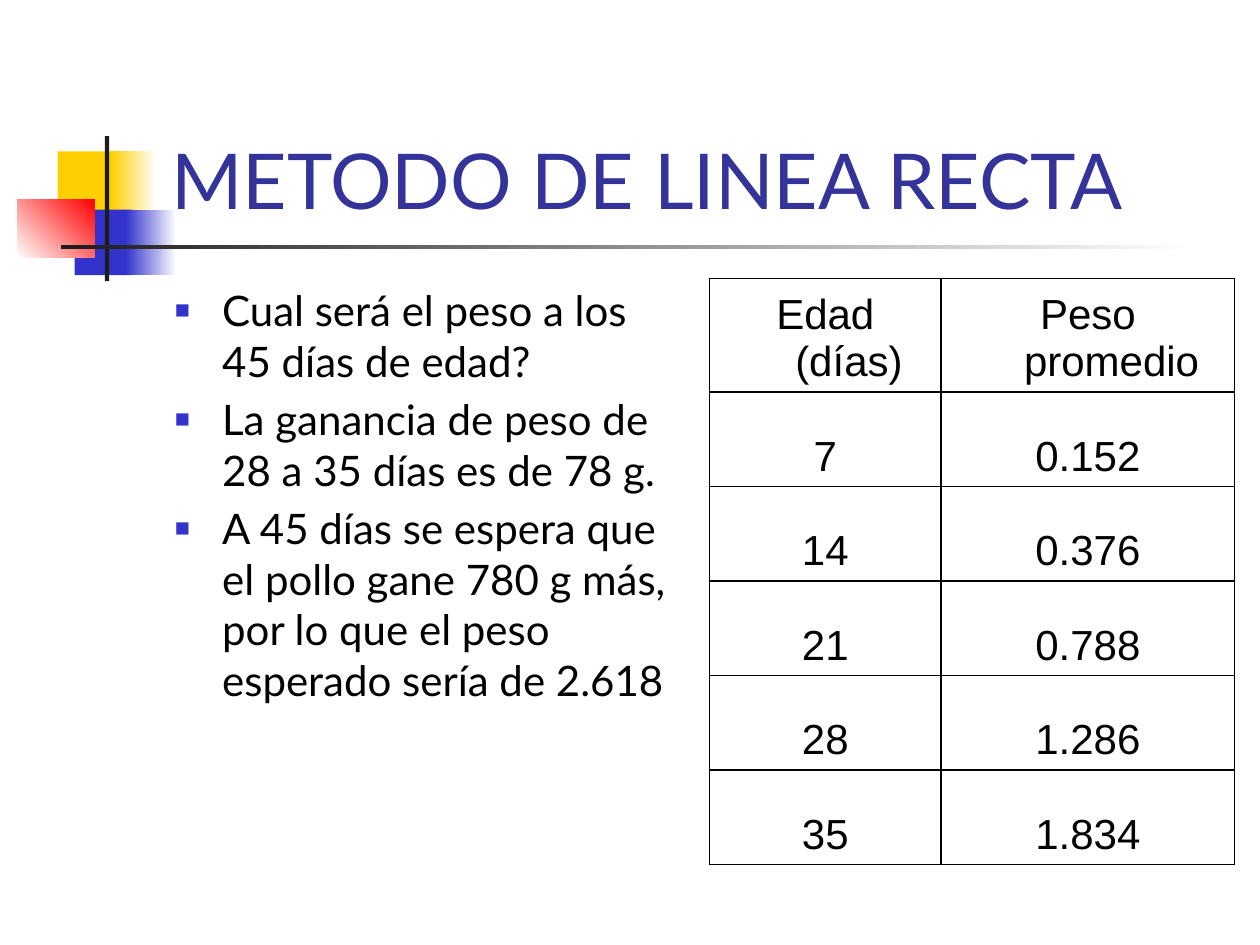
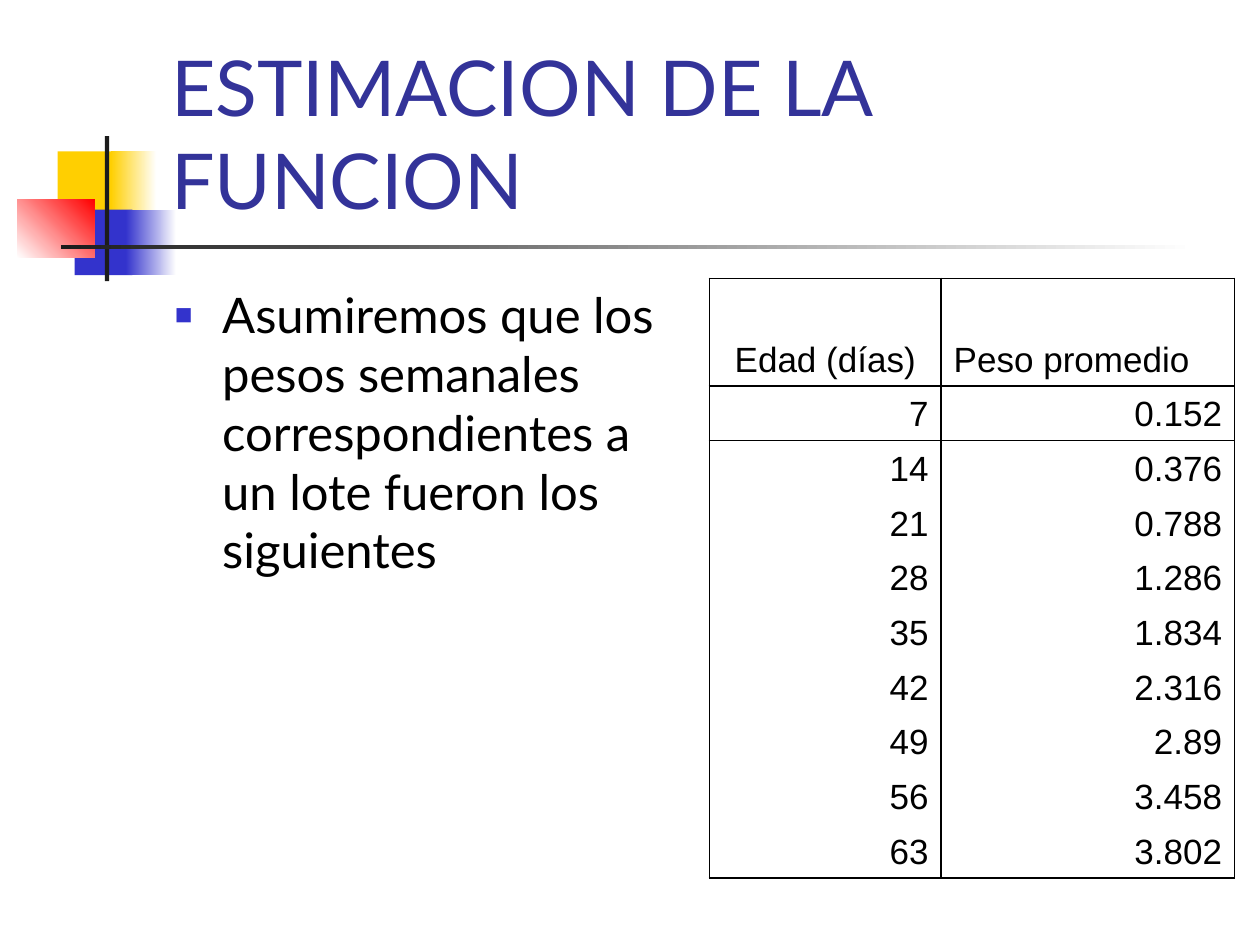
import pptx
import pptx.util
import pptx.dml.color
import pptx.enum.shapes
import pptx.enum.text
import pptx.oxml.ns
from dataclasses import dataclass
from lxml import etree

Pt = pptx.util.Pt
Align = pptx.enum.text.PP_ALIGN
Anchor = pptx.enum.text.MSO_ANCHOR
qn = pptx.oxml.ns.qn


@dataclass(frozen=True)
class Theme:
    # Colours
    title: str = "333399"
    ink: str = "000000"
    gold: str = "FFCF01"
    blue: str = "3333CC"
    red: str = "FF0000"
    dark: str = "1C1C1C"
    white: str = "FFFFFF"
    # Fonts and sizes
    font: str = "Lato"
    cell: str = "Arial"
    head: int = 44
    large: int = 28
    mid: int = 24
    small: int = 20
    # Hanging indent
    hang: float = 27


THEME = Theme()
PLAIN = "{2D5ABB26-0587-4C30-8999-92F81FD0307C}"  # table style without grid
AGES = range(7, 64, 7)
LOADS = ["0.152", "0.376", "0.788", "1.286", "1.834",
         "2.316", "2.89", "3.458", "3.802"]


def rgb(code):
    return pptx.dml.color.RGBColor.from_string(code)


def node(parent, tag, **attrs):
    item = etree.SubElement(parent, qn(tag))
    for key, value in attrs.items():
        item.set(key, str(value))
    return item


# Text
def write(para, text, font=THEME.font, size=THEME.mid, color=THEME.ink,
          align=Align.LEFT, hang=0, before=0, bullet=None):
    para.alignment = align
    para.space_before = Pt(before)
    run = para.add_run()
    run.text = text
    run.font.name = font
    run.font.size = Pt(size)
    run.font.color.rgb = rgb(color)
    props = para._p.get_or_add_pPr()
    if hang:
        props.set("marL", str(Pt(hang)))
        props.set("indent", str(-Pt(hang)))
    if bullet:
        node(node(props, "a:buClr"), "a:srgbClr", val=bullet)
        node(props, "a:buSzPct", val=60000)
        node(props, "a:buFont", typeface="Arial")
        node(props, "a:buChar", char="■")


def box(slide, left, top, width, height, anchor):
    shape = slide.shapes.add_textbox(Pt(left), Pt(top), Pt(width), Pt(height))
    frame = shape.text_frame
    frame.word_wrap = True
    frame.vertical_anchor = anchor
    return frame


def title(slide, text):
    frame = box(slide, 90.7, 16.6, 613.4, 115.2, Anchor.BOTTOM)
    write(frame.paragraphs[0], text, size=THEME.head, color=THEME.title)


def points(slide, lines, size):
    frame = box(slide, 92.9, 159.1, 300.2, 324, Anchor.TOP)
    for i, line in enumerate(lines):
        para = frame.add_paragraph() if i else frame.paragraphs[0]
        write(para, line, size=size, hang=THEME.hang, before=size * 0.2,
              bullet=THEME.blue)


# Corner blocks and rules
def block(slide, left, top, width, height, start, end=None, angle=0):
    kind = pptx.enum.shapes.MSO_SHAPE.RECTANGLE
    shape = slide.shapes.add_shape(kind, Pt(left), Pt(top), Pt(width), Pt(height))
    shape.shadow.inherit = False
    shape.line.fill.background()
    if end:
        shape.fill.gradient()
        shape.fill.gradient_angle = angle
        for stop, code in zip(shape.fill.gradient_stops, (start, end)):
            stop.color.rgb = rgb(code)
    else:
        shape.fill.solid()
        shape.fill.fore_color.rgb = rgb(start)


def decor(slide):
    t = THEME
    block(slide, 33, 86.5, 34.5, 37.4, t.gold)
    block(slide, 63.4, 86.5, 26, 37.4, t.gold, t.white)
    block(slide, 42.7, 119.8, 33, 37.4, t.blue)
    block(slide, 72, 119.8, 28.8, 37.4, t.blue, t.white)
    block(slide, 9.8, 113.8, 44.2, 33.4, t.white, t.red, angle=45)
    block(slide, 59.9, 77.8, 2.5, 82.8, t.dark)
    block(slide, 34.8, 140, 648, 2.5, t.dark, t.white)


# Tables
def edge(cell, sides):
    props = cell._tc.get_or_add_tcPr()
    for side in sides:
        line = node(props, "a:ln" + side, w=Pt(1))
        node(node(line, "a:solidFill"), "a:srgbClr", val=THEME.ink)


def grid(slide, count, size, first, step, heads, align, inner):
    """Weights by age; heads aligns the header cells, inner rules the rows."""
    rows = [("Edad (días)", "Peso promedio")]
    rows += [(str(age), load) for age, load in zip(AGES[:count], LOADS)]
    shape = slide.shapes.add_table(len(rows), 2, Pt(405.4), Pt(159.1),
                                   Pt(300.2), Pt(first + step * count))
    table = shape.table
    table.first_row = table.horz_banding = False
    next(shape._element.iter(qn("a:tableStyleId"))).text = PLAIN
    for col, width in zip(table.columns, (132.4, 167.8)):
        col.width = Pt(width)
    for i, row in enumerate(rows):
        table.rows[i].height = Pt(step if i else first)
        sides = ["L", "R"]
        if inner or i < 2:
            sides.append("T")
        if inner or i in (0, count):
            sides.append("B")
        for j, text in enumerate(row):
            cell = table.cell(i, j)
            cell.vertical_anchor = Anchor.BOTTOM
            edge(cell, sides)
            cell.fill.background()
            write(cell.text_frame.paragraphs[0], text, font=THEME.cell,
                  size=size, hang=THEME.hang,
                  align=align if i else heads[j])


def page(deck, text):
    slide = deck.slides.add_slide(deck.slide_layouts[6])
    decor(slide)
    title(slide, text)
    return slide


def main():
    deck = pptx.Presentation()
    deck.slide_width, deck.slide_height = Pt(720), Pt(540)

    # Straight line method
    slide = page(deck, "METODO DE LINEA RECTA")
    points(slide, [
        "Cual será el peso a los 45 días de edad?",
        "La ganancia de peso de 28 a 35 días es de 78 g.",
        "A 45 días se espera que el pollo gane 780 g más, "
        "por lo que el peso esperado sería de 2.618",
    ], THEME.mid)
    grid(slide, 5, THEME.mid, 64.8, 54, (Align.CENTER, Align.CENTER),
         Align.CENTER, inner=True)

    # Estimating the function
    slide = page(deck, "ESTIMACION DE LA FUNCION")
    points(slide, [
        "Asumiremos que los pesos semanales correspondientes a un lote "
        "fueron los siguientes",
    ], THEME.large)
    grid(slide, 9, THEME.small, 61.4, 31.2, (Align.CENTER, Align.LEFT),
         Align.RIGHT, inner=False)

    deck.save("out.pptx")


if __name__ == "__main__":
    main()
